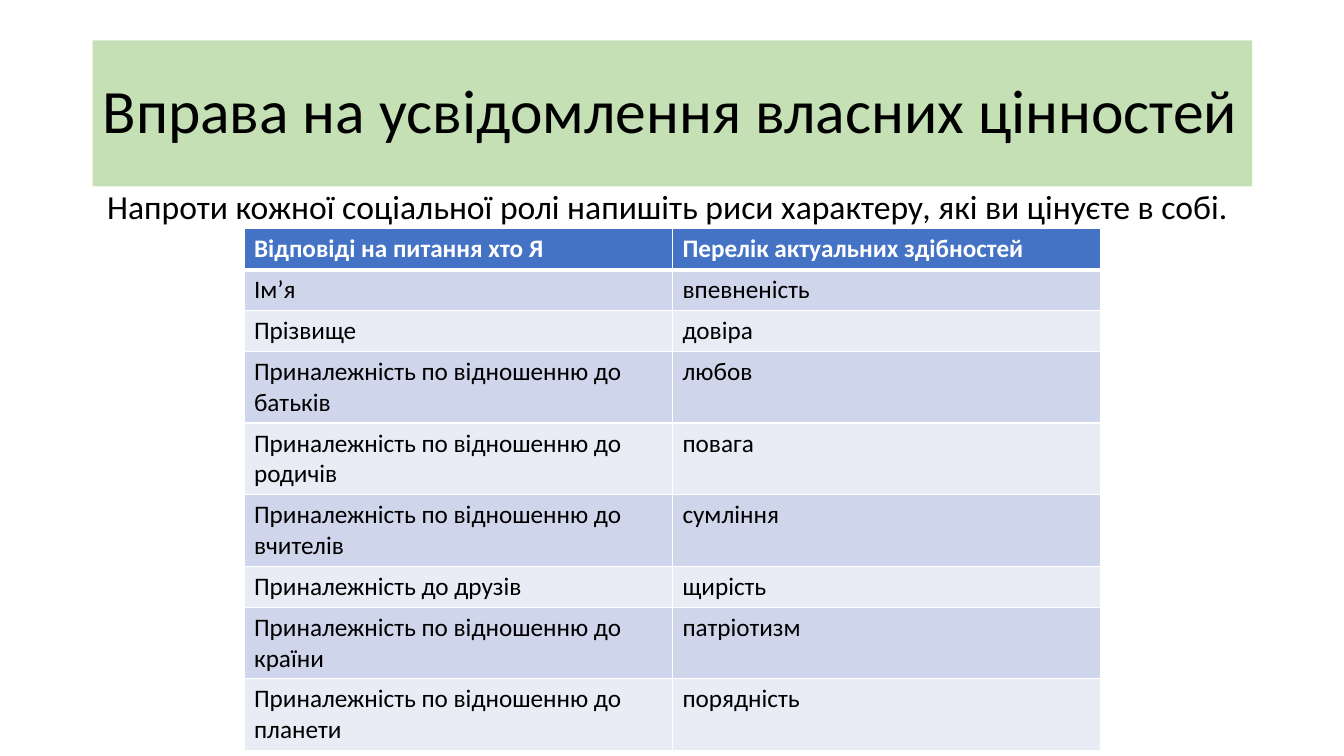
from lxml import etree
from pptx import Presentation
from pptx.dml.color import RGBColor
from pptx.enum.shapes import MSO_SHAPE
from pptx.enum.text import MSO_ANCHOR, PP_ALIGN
from pptx.oxml.ns import qn
from pptx.util import Inches, Pt

RECTANGLE = MSO_SHAPE.RECTANGLE
MIDDLE = MSO_ANCHOR.MIDDLE
LEFT, CENTER = PP_ALIGN.LEFT, PP_ALIGN.CENTER

BLACK = RGBColor(0x00, 0x00, 0x00)
WHITE = RGBColor(0xFF, 0xFF, 0xFF)
GREEN = RGBColor(0xC5, 0xE0, 0xB4)
BLUE = RGBColor(0x44, 0x72, 0xC4)
BANDS = (RGBColor(0xE9, 0xEB, 0xF5), RGBColor(0xCF, 0xD5, 0xEA))

BELONGING = "Приналежність по відношенню до "
ROWS = [
    ("Відповіді на питання хто Я", "Перелік актуальних здібностей"),
    ("Ім’я", "впевненість"),
    ("Прізвище", "довіра"),
    (BELONGING + "батьків", "любов"),
    (BELONGING + "родичів", "повага"),
    (BELONGING + "вчителів", "сумління"),
    ("Приналежність до друзів", "щирість"),
    (BELONGING + "країни", "патріотизм"),
    (BELONGING + "планети", "порядність"),
]


def write(frame, text, size=18, color=BLACK, bold=False, align=LEFT, spacing=None):
    """Put one formatted paragraph into a text frame."""
    para = frame.paragraphs[0]
    para.alignment = align
    para.line_spacing = spacing
    span = para.add_run()
    span.text = text
    span.font.name = SlideBuilder.FONT
    span.font.size = Pt(size)
    span.font.bold = bold
    span.font.color.rgb = color


class SlideBuilder:
    FONT = "Calibri"

    def __init__(self, page):
        self.page = page

    def banner(self, text, left, top, width, height, fill, **style):
        box = self.page.shapes.add_shape(
            RECTANGLE, Inches(left), Inches(top), Inches(width), Inches(height))
        box.shadow.inherit = False
        box.fill.solid()
        box.fill.fore_color.rgb = fill
        box.line.fill.background()
        box.text_frame.word_wrap = True
        box.text_frame.vertical_anchor = MIDDLE
        write(box.text_frame, text, **style)

    def label(self, text, left, top, width, height, **style):
        box = self.page.shapes.add_textbox(
            Inches(left), Inches(top), Inches(width), Inches(height))
        box.text_frame.word_wrap = False
        write(box.text_frame, text, **style)

    def border(self, cell, side, width):
        properties = cell._tc.get_or_add_tcPr()
        line = etree.SubElement(properties, qn(f"a:ln{side}"), w=str(Pt(width)))
        fill = etree.SubElement(line, qn("a:solidFill"))
        etree.SubElement(fill, qn("a:srgbClr"), val=str(WHITE))

    def table(self, rows, left, top, column_width, row_height):
        count = len(rows[0])
        grid = self.page.shapes.add_table(
            len(rows), count, Inches(left), Inches(top),
            Inches(column_width * count), Inches(row_height * len(rows))).table
        for column in grid.columns:
            column.width = Inches(column_width)
        for index, texts in enumerate(rows):
            grid.rows[index].height = Inches(row_height)
            header = index == 0
            # The line under the header is thicker than the others
            widths = {"L": 1, "R": 1, "T": 3 if index == 1 else 1, "B": 3 if header else 1}
            for cell, text in zip(grid.rows[index].cells, texts):
                for side, width in widths.items():
                    self.border(cell, side, width)
                cell.fill.solid()
                cell.fill.fore_color.rgb = BLUE if header else BANDS[index % 2]
                write(cell.text_frame, text, color=WHITE if header else BLACK, bold=header)


def main():
    deck = Presentation()
    deck.slide_width, deck.slide_height = Inches(13.33), Inches(7.5)
    builder = SlideBuilder(deck.slides.add_slide(deck.slide_layouts[6]))

    # Title
    builder.banner("Вправа на усвідомлення власних цінностей",
                   0.92, 0.4, 11.5, 1.45, GREEN, size=44, spacing=0.9)

    # Roles and traits
    builder.table(ROWS, 2.42, 2.27, column_width=4.25, row_height=0.38)

    # Instruction
    builder.label("Напроти кожної соціальної ролі напишіть риси характеру, "
                  "які ви цінуєте в собі.",
                  0.91, 1.8, 11.42, 0.5, size=24, align=CENTER)

    deck.save("out.pptx")


if __name__ == "__main__":
    main()
